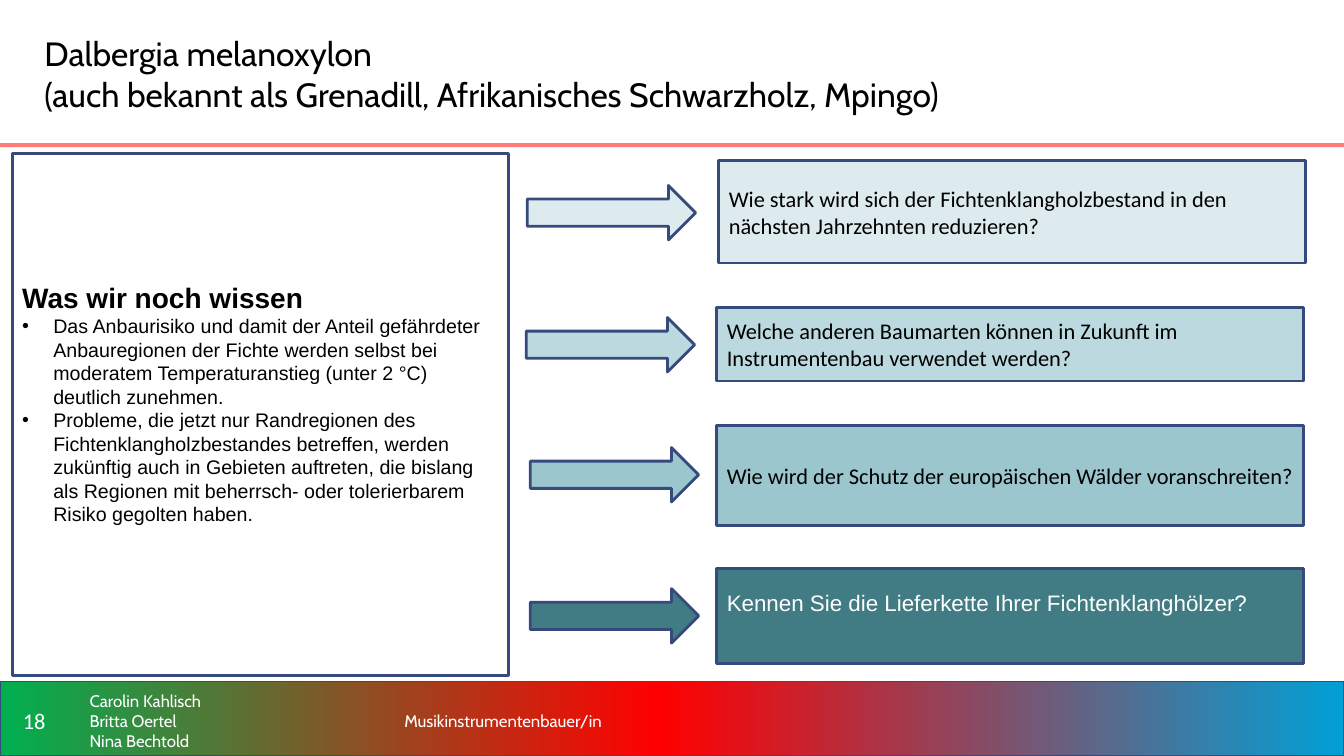
from copy import deepcopy

from lxml.etree import SubElement
from pptx import Presentation
from pptx.dml.color import RGBColor
from pptx.enum.shapes import MSO_SHAPE
from pptx.enum.text import MSO_ANCHOR, MSO_AUTO_SIZE, PP_ALIGN
from pptx.oxml.ns import qn
from pptx.util import Inches, Pt

COLORS = {
    "black": "000000", "white": "FFFFFF", "outline": "364A7D", "rule": "FF7E79",
    "green": "00B050", "red": "FF0000", "blue": "01A0D6",
    "pale": "DDEBEE", "light": "BBD9DE", "medium": "9BC6CE", "dark": "417B84",
}
HEADING = {"name": "Cabin", "size": Pt(24), "bold": False}
FOOTER = {"name": "Cabin", "size": Pt(12)}
NUMBER = {"name": "Calibri", "size": Pt(16)}
QUESTION = {"name": "Calibri", "size": Pt(16)}
SUPPLY_CHAIN = {"name": "Arial", "size": Pt(16)}
PANEL_HEADING = {"name": "Arial", "size": Pt(20), "bold": True}
PANEL_BULLET = {"name": "Arial", "size": Pt(14), "bold": False}

KNOWN_FACTS = [
    "Das Anbaurisiko und damit der Anteil gefährdeter Anbauregionen der Fichte werden "
    "selbst bei moderatem Temperaturanstieg (unter 2 °C) deutlich zunehmen.",
    "Probleme, die jetzt nur Randregionen des Fichtenklangholzbestandes betreffen, werden "
    "zukünftig auch in Gebieten auftreten, die bislang als Regionen mit beherrsch- oder "
    "tolerierbarem Risiko gegolten haben.",
]
QUESTIONS = [
    ("Wie stark wird sich der Fichtenklangholzbestand in den nächsten Jahrzehnten reduzieren?",
     "pale", "black", QUESTION, (7.13, 1.59, 5.82, 1.02), (5.23, 1.84), 0.05),
    ("Welche anderen Baumarten können in Zukunft im Instrumentenbau verwendet werden?",
     "light", "black", QUESTION, (7.11, 3.05, 5.82, 0.73), (5.22, 3.15), 0.05),
    ("Wie wird der Schutz der europäischen Wälder voranschreiten?",
     "medium", "black", QUESTION, (7.11, 4.22, 5.82, 0.99), (5.26, 4.44), 0.05),
    ("Kennen Sie die Lieferkette Ihrer Fichtenklanghölzer?",
     "dark", "white", SUPPLY_CHAIN, (7.11, 5.64, 5.82, 0.94), (5.26, 5.84), 0.31),
]


def color(name):
    return RGBColor.from_string(COLORS[name])


def lengths(box):
    return [Inches(value) for value in box]


def add_block(slide, box, fill=None, line_width=2, kind=MSO_SHAPE.RECTANGLE):
    shape = slide.shapes.add_shape(kind, *lengths(box))
    shape.shadow.inherit = False
    if fill:
        shape.fill.solid()
        shape.fill.fore_color.rgb = color(fill)
    else:
        shape.fill.background()
    if line_width:
        shape.line.color.rgb = color("outline")
        shape.line.width = Pt(line_width)
    else:
        shape.line.fill.background()
    return shape


def write(shape, lines, text_color, align=PP_ALIGN.LEFT, spacing=None,
          left_inset=0.1, bottom_inset=0.05):
    frame = shape.text_frame
    settings = {
        "word_wrap": True, "auto_size": MSO_AUTO_SIZE.NONE,
        "vertical_anchor": MSO_ANCHOR.MIDDLE,
        "margin_left": Inches(left_inset), "margin_right": Inches(0.1),
        "margin_top": Inches(0.05), "margin_bottom": Inches(bottom_inset),
    }
    for name, value in settings.items():
        setattr(frame, name, value)
    for index, (text, style) in enumerate(lines):
        para = frame.add_paragraph() if index else frame.paragraphs[0]
        para.text = text
        para.alignment = align
        if spacing:
            para.line_spacing = spacing
        for span in para.runs:
            span.font.color.rgb = color(text_color)
            for name, value in style.items():
                setattr(span.font, name, value)
    return frame


def add_text(slide, box, lines, **options):
    return write(slide.shapes.add_textbox(*lengths(box)), lines, "white", **options)


def add_bullet(para):
    properties = para._p.get_or_add_pPr()
    properties.set("marL", str(Inches(0.31)))
    properties.set("indent", str(-Inches(0.31)))
    tint = SubElement(properties, qn("a:buClr"))
    SubElement(tint, qn("a:srgbClr")).set("val", COLORS["black"])
    SubElement(properties, qn("a:buFont")).set("typeface", "Arial")
    SubElement(properties, qn("a:buChar")).set("char", "•")


def add_title(slide, box):
    title = slide.shapes.title
    title.left, title.top, title.width, title.height = lengths(box)
    text = "Dalbergia melanoxylon\v(auch bekannt als Grenadill, Afrikanisches Schwarzholz, Mpingo)"
    write(title, [(text, HEADING)], "black")
    left, top, _, height = box
    add_block(slide, (0, top + height + 0.1, 13.33, 0.04), "rule", line_width=0)


def add_footer(slide, box):
    left, top, _, _ = box
    band = add_block(slide, box, line_width=1)
    band.fill.gradient()
    band.fill.gradient_angle = 0
    first = band._element.spPr.find(".//" + qn("a:gs"))
    first.addnext(deepcopy(first))
    stops = [("green", 0), ("red", 0.49), ("blue", 1)]
    for stop, (name, position) in zip(band.fill.gradient_stops, stops):
        stop.color.rgb = color(name)
        stop.position = position

    text_top = top + 0.08
    authors = ["Carolin Kahlisch", "Britta Oertel", "Nina Bechtold"]
    add_text(slide, (left, text_top, 0.68, 0.61), [("18", NUMBER)], align=PP_ALIGN.CENTER)
    add_text(slide, (left + 0.79, text_top, 2.78, 0.62), [(name, FOOTER) for name in authors])
    add_text(slide, (left + 3.66, text_top, 4.19, 0.61),
             [("Musikinstrumentenbauer/in", FOOTER)], spacing=1.1, left_inset=0.35)


def add_knowledge_panel(slide, box):
    lines = [("Was wir noch wissen", PANEL_HEADING)]
    lines += [(fact, PANEL_BULLET) for fact in KNOWN_FACTS]
    frame = write(add_block(slide, box), lines, "black", bottom_inset=0.27)
    for para in frame.paragraphs[1:]:
        add_bullet(para)


def add_question(slide, text, fill, text_color, style, box, arrow_corner, bottom_inset):
    add_block(slide, (*arrow_corner, 1.67, 0.54), fill, kind=MSO_SHAPE.RIGHT_ARROW)
    write(add_block(slide, box, fill), [(text, style)], text_color, bottom_inset=bottom_inset)


def main():
    deck = Presentation()
    deck.slide_width, deck.slide_height = Inches(13.33), Inches(7.5)
    page = deck.slides.add_slide(deck.slide_layouts[5])
    add_footer(page, (0, 6.76, 13.33, 0.74))
    add_title(page, (0.34, 0.14, 9.84, 1.18))
    add_knowledge_panel(page, (0.12, 1.52, 4.92, 5.18))
    for question in QUESTIONS:
        add_question(page, *question)
    deck.save("out.pptx")


if __name__ == "__main__":
    main()
